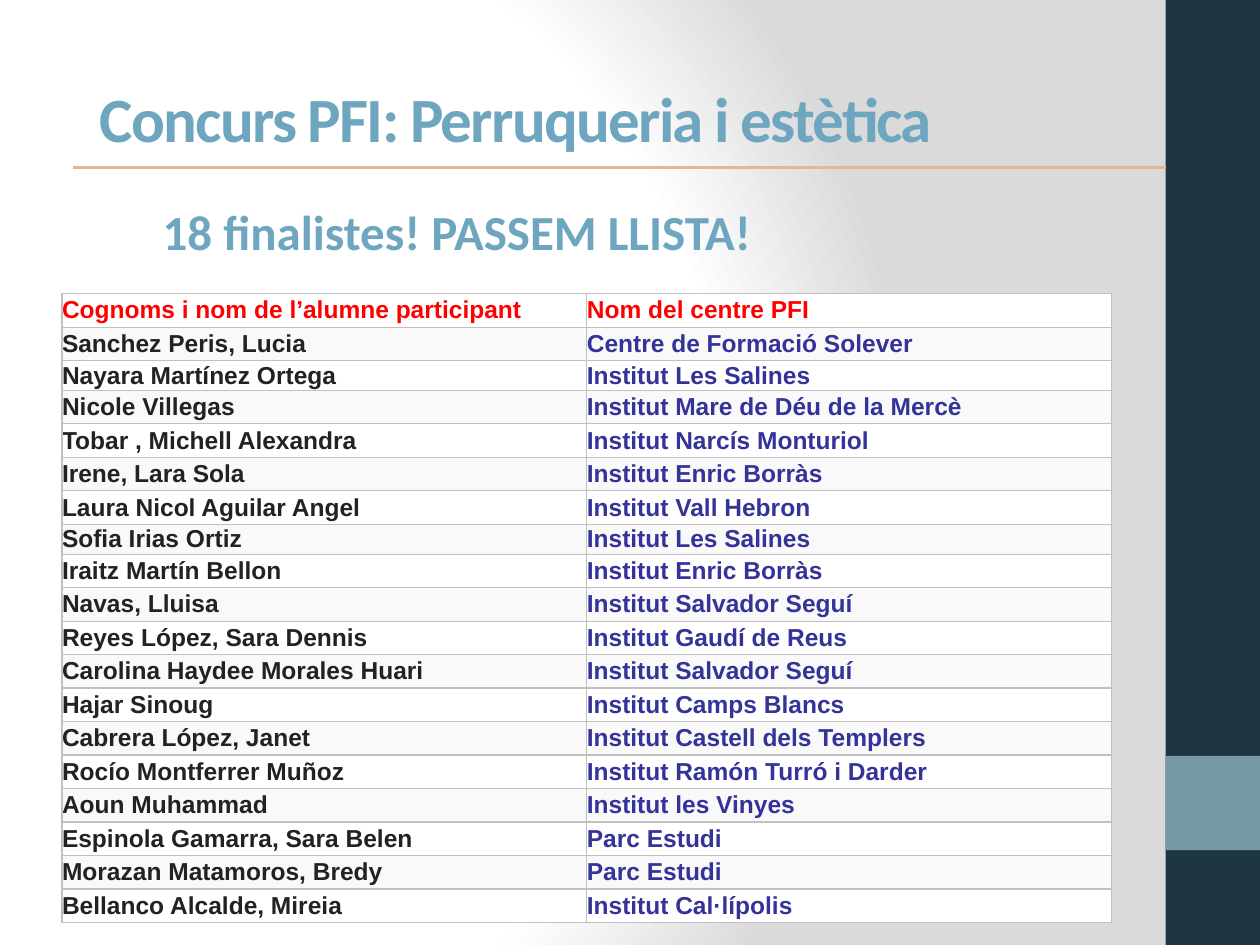
from lxml import etree
from pptx import Presentation
from pptx import util as u
from pptx.dml.color import RGBColor
from pptx.enum import shapes, text
from pptx.oxml import parse_xml
from pptx.oxml.ns import qn

NS = 'xmlns:a="http://schemas.openxmlformats.org/drawingml/2006/main"'
NAVY, TEAL, BLUE, ORANGE = "1D3641", "759AA5", "6FA6BF", "EBB391"
RED, BLACK, INDIGO, GREY = "FF0000", "222222", "333399", "C0C0C0"
ROW_FILLS = ("FFFFFF", "F9F9F9")
SHORT_ROWS = (2, 7)

HEADING = {"name": "Calibri", "bold": True}
CELL = {"name": "Arial", "bold": True, "size": u.Pt(14)}

ROWS = [
    ("Cognoms i nom de l’alumne participant", "Nom del centre PFI"),
    ("Sanchez Peris, Lucia", "Centre de Formació Solever"),
    ("Nayara Martínez Ortega", "Institut Les Salines"),
    ("Nicole Villegas", "Institut Mare de Déu de la Mercè"),
    ("Tobar , Michell Alexandra", "Institut Narcís Monturiol"),
    ("Irene, Lara Sola", "Institut Enric Borràs"),
    ("Laura Nicol Aguilar Angel", "Institut Vall Hebron"),
    ("Sofia Irias Ortiz", "Institut Les Salines"),
    ("Iraitz Martín Bellon", "Institut Enric Borràs"),
    ("Navas, Lluisa", "Institut Salvador Seguí"),
    ("Reyes López, Sara Dennis", "Institut Gaudí de Reus"),
    ("Carolina Haydee Morales Huari", "Institut Salvador Seguí"),
    ("Hajar Sinoug", "Institut Camps Blancs"),
    ("Cabrera López, Janet", "Institut Castell dels Templers"),
    ("Rocío Montferrer Muñoz", "Institut Ramón Turró i Darder"),
    ("Aoun Muhammad", "Institut les Vinyes"),
    ("Espinola Gamarra, Sara Belen", "Parc Estudi"),
    ("Morazan Matamoros, Bredy", "Parc Estudi"),
    ("Bellanco Alcalde, Mireia", "Institut Cal·lípolis"),
]


def color(value):
    return RGBColor.from_string(value)


def assign(target, values):
    for name, value in values.items():
        setattr(target, name, value)


def place(shape, left, top, width, height):
    assign(shape, {"left": u.Cm(left), "top": u.Cm(top),
                   "width": u.Cm(width), "height": u.Cm(height)})


def write(para, wording, font, ink):
    span = para.add_run()
    span.text = wording
    assign(span.font, font)
    span.font.color.rgb = color(ink)
    return span


def paint_background(page):
    page.background.fill.solid()
    solid = page.background.fill._xPr.find(qn("a:solidFill"))
    stops = "".join(
        f'<a:gs pos="{position}000"><a:srgbClr val="{value}"/></a:gs>'
        for position, value in ((0, "FFFFFF"), (75, "FFFFFF"), (100, "DADADA")))
    solid.getparent().replace(solid, parse_xml(
        f'<a:gradFill {NS} rotWithShape="1"><a:gsLst>{stops}</a:gsLst>'
        '<a:path path="circle"><a:fillToRect l="20000" t="50000" r="100000" b="50000"/>'
        '</a:path></a:gradFill>'))


def add_bar(page, top, height, fill):
    bar = page.shapes.add_shape(shapes.MSO_SHAPE.RECTANGLE, 0, 0, 0, 0)
    place(bar, 23.5, top, 1.9, height)
    bar.shadow.inherit = False
    bar.fill.solid()
    bar.fill.fore_color.rgb = color(fill)
    bar.line.fill.background()


def add_rule(page):
    rule = page.shapes.add_connector(
        shapes.MSO_CONNECTOR.STRAIGHT, u.Cm(1.48), u.Cm(3.38), u.Cm(23.5), u.Cm(3.38))
    rule.line.color.rgb = color(ORANGE)
    rule.line.width = u.Pt(1.75)
    etree.SubElement(rule._element.spPr, qn("a:effectLst"))


def fill_heading(box, wording, size, anchor, indent=0):
    frame = box.text_frame
    assign(frame, {"margin_left": 0, "margin_right": 0, "margin_bottom": 0,
                   "margin_top": u.Cm(0.03), "word_wrap": True,
                   "auto_size": text.MSO_AUTO_SIZE.NONE, "vertical_anchor": anchor})
    para = frame.paragraphs[0]
    para.alignment = text.PP_ALIGN.LEFT
    properties = para._p.get_or_add_pPr()
    properties.set("marL", str(u.Cm(indent)))
    properties.set("indent", "0")
    return write(para, wording, {**HEADING, "size": u.Pt(size)}, BLUE)


def border_cell(cell):
    properties = cell._tc.get_or_add_tcPr()
    for side in "LRTB":
        properties.append(parse_xml(
            f'<a:ln{side} {NS} w="{u.Pt(0.75)}"><a:solidFill>'
            f'<a:srgbClr val="{GREY}"/></a:solidFill></a:ln{side}>'))


def add_finalists(page):
    frame = page.shapes.add_table(len(ROWS), 2, u.Cm(1.25), u.Cm(5.92),
                                  u.Cm(21.16), u.Cm(12.67))
    table = frame.table
    assign(table, {"first_row": False, "horz_banding": False})
    for column in table.columns:
        column.width = u.Cm(10.58)
    for index, wordings in enumerate(ROWS):
        table.rows[index].height = u.Cm(0.6 if index in SHORT_ROWS else 0.675)
        inks = (BLACK, INDIGO) if index else (RED, RED)
        for cell, wording, ink in zip(table.rows[index].cells, wordings, inks):
            assign(cell, {"margin_left": 0, "margin_right": 0, "margin_top": 0,
                          "margin_bottom": 0, "vertical_anchor": text.MSO_ANCHOR.MIDDLE})
            border_cell(cell)
            cell.fill.solid()
            cell.fill.fore_color.rgb = color(ROW_FILLS[index % 2])
            write(cell.text_frame.paragraphs[0], wording, CELL, ink)


def main():
    deck = Presentation()
    assign(deck, {"slide_width": u.Cm(25.4), "slide_height": u.Cm(19.05)})
    page = deck.slides.add_slide(deck.slide_layouts[5])

    # Background and side band
    paint_background(page)
    add_bar(page, 0, 19.05, NAVY)
    add_bar(page, 15.24, 1.9, TEAL)

    # Title, rule and subtitle
    title = page.shapes.title
    place(title, 1.98, 1.57, 19.74, 1.57)
    span = fill_heading(title, "Concurs PFI: Perruqueria i estètica", 36,
                        text.MSO_ANCHOR.MIDDLE, 0.03)
    span.font._element.set("spc", "-100")
    add_rule(page)
    subtitle = page.shapes.add_textbox(0, 0, 0, 0)
    place(subtitle, 1.98, 4.04, 15.16, 2.44)
    fill_heading(subtitle, "18 finalistes! PASSEM LLISTA!", 28,
                 text.MSO_ANCHOR.TOP, 1.3)

    # Finalists and their centres
    add_finalists(page)
    deck.save("out.pptx")


if __name__ == "__main__":
    main()
